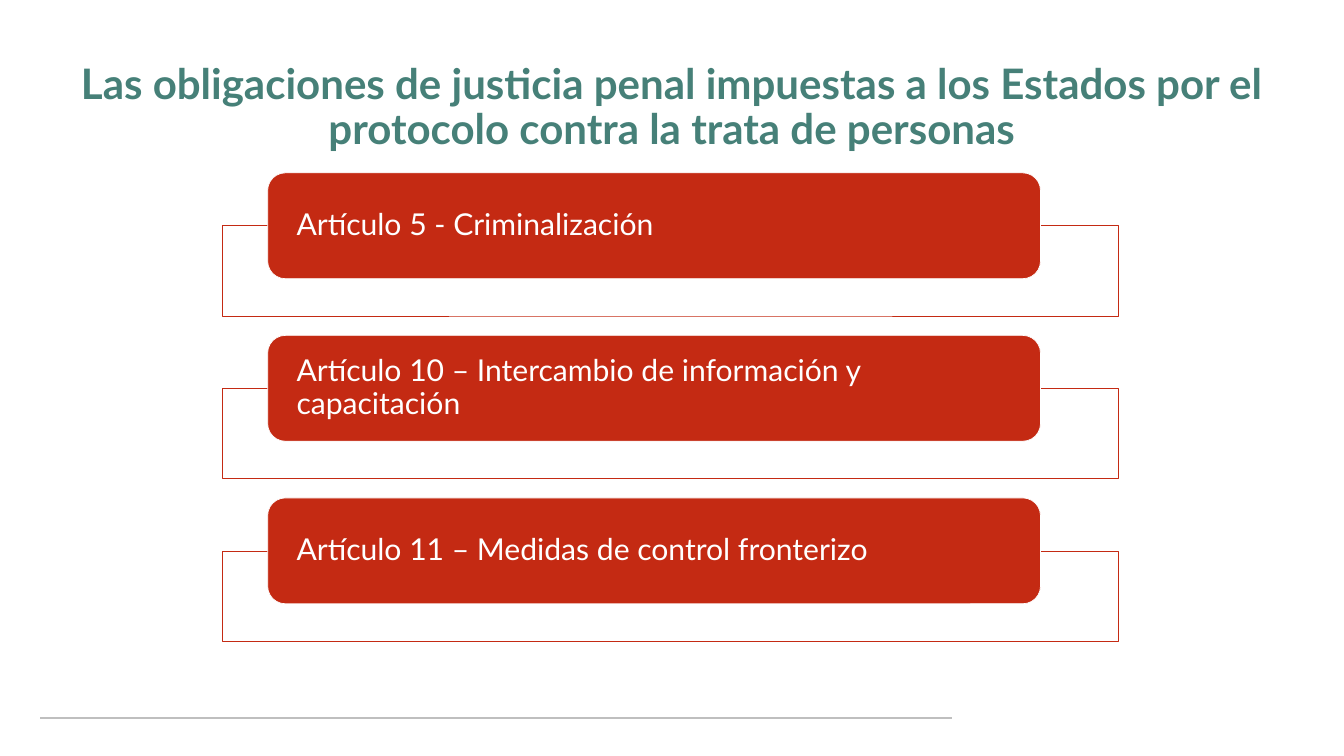
from dataclasses import dataclass

import lxml.etree
import pptx
import pptx.dml.color
import pptx.enum.shapes
import pptx.enum.text
import pptx.oxml.ns
import pptx.util
from pptx.util import Inches

TITLE = ("Las obligaciones de justicia penal impuestas a los Estados "
         "por el protocolo contra la trata de personas")
ARTICLES = [
    "Artículo 5 - Criminalización",
    "Artículo 10 – Intercambio de información y capacitación",
    "Artículo 11 – Medidas de control fronterizo",
]
FIRST_TOP = 3.43
ROW_STEP = 3.225
FRAME_DROP = 1.05


@dataclass(frozen=True)
class Theme:
    """Colours, font and type sizes of the slide."""
    font: str = "Lato"
    teal: str = "468078"
    red: str = "C42A13"
    white: str = "FFFFFF"
    grey: str = "BFBFBF"
    title_size: int = 60
    article_size: int = 43


THEME = Theme()


def rgb(code):
    """Return the colour object for a hex code."""
    return pptx.dml.color.RGBColor.from_string(code)


def style_text(frame, text, size, color, align, inset_x, inset_y, bold=False):
    """Write one paragraph into a text frame and format it."""
    frame.text = text
    frame.word_wrap = True
    frame.auto_size = pptx.enum.text.MSO_AUTO_SIZE.NONE
    frame.vertical_anchor = pptx.enum.text.MSO_ANCHOR.MIDDLE
    frame.margin_left = frame.margin_right = Inches(inset_x)
    frame.margin_top = frame.margin_bottom = Inches(inset_y)
    paragraph = frame.paragraphs[0]
    paragraph.alignment = align
    paragraph.line_spacing = 0.9
    font = paragraph.runs[0].font
    font.name = THEME.font
    font.size = pptx.util.Pt(size)
    font.bold = bold
    font.color.rgb = rgb(color)


def add_title(slide):
    """Place and format the slide title."""
    title = slide.shapes.title
    title.left, title.top = Inches(0.82), Inches(1.05)
    title.width, title.height = Inches(25.01), Inches(2.2)
    style_text(title.text_frame, TITLE, THEME.title_size, THEME.teal,
               pptx.enum.text.PP_ALIGN.CENTER, 0.2, 0.1, bold=True)


def add_footer_rule(slide):
    """Draw the thin rule at the foot of the slide."""
    rule = slide.shapes.add_connector(
        pptx.enum.shapes.MSO_CONNECTOR.STRAIGHT,
        Inches(0.8), Inches(14.25), Inches(18.88), Inches(14.25))
    rule.line.color.rgb = rgb(THEME.grey)
    rule.line.width = pptx.util.Pt(2.25)
    lxml.etree.SubElement(rule._element.spPr, pptx.oxml.ns.qn("a:effectLst"))


def add_box(slide, kind, left, top, width, height, fill, line):
    """Add a filled and outlined shape without shadow."""
    box = slide.shapes.add_shape(
        kind, Inches(left), Inches(top), Inches(width), Inches(height))
    box.shadow.inherit = False
    box.fill.solid()
    box.fill.fore_color.rgb = rgb(fill)
    box.line.color.rgb = rgb(line)
    box.line.width = pptx.util.Pt(1)
    return box


def set_opacity(shape, percent):
    """Make a solid shape fill partly transparent."""
    fill_color = shape._element.spPr.find(
        pptx.oxml.ns.qn("a:solidFill")).find(pptx.oxml.ns.qn("a:srgbClr"))
    alpha = lxml.etree.SubElement(fill_color, pptx.oxml.ns.qn("a:alpha"))
    alpha.set("val", str(percent * 1000))


def add_article(slide, text, top):
    """Add an article label over its open frame."""
    kinds = pptx.enum.shapes.MSO_SHAPE
    frame = add_box(slide, kinds.RECTANGLE, 4.42, top + FRAME_DROP,
                    17.77, 1.79, THEME.white, THEME.red)
    set_opacity(frame, 90)
    label = add_box(slide, kinds.ROUNDED_RECTANGLE, 5.31, top,
                    15.33, 2.1, THEME.red, THEME.white)
    style_text(label.text_frame, text, THEME.article_size, THEME.white,
               pptx.enum.text.PP_ALIGN.LEFT, 0.47, 0)


def main():
    """Build the slide and save it."""
    deck = pptx.Presentation()
    deck.slide_width, deck.slide_height = Inches(26.66), Inches(15)
    slide = deck.slides.add_slide(deck.slide_layouts[5])
    add_title(slide)
    add_footer_rule(slide)
    for row, text in enumerate(ARTICLES):
        add_article(slide, text, FIRST_TOP + row * ROW_STEP)
    deck.save("out.pptx")


if __name__ == "__main__":
    main()
